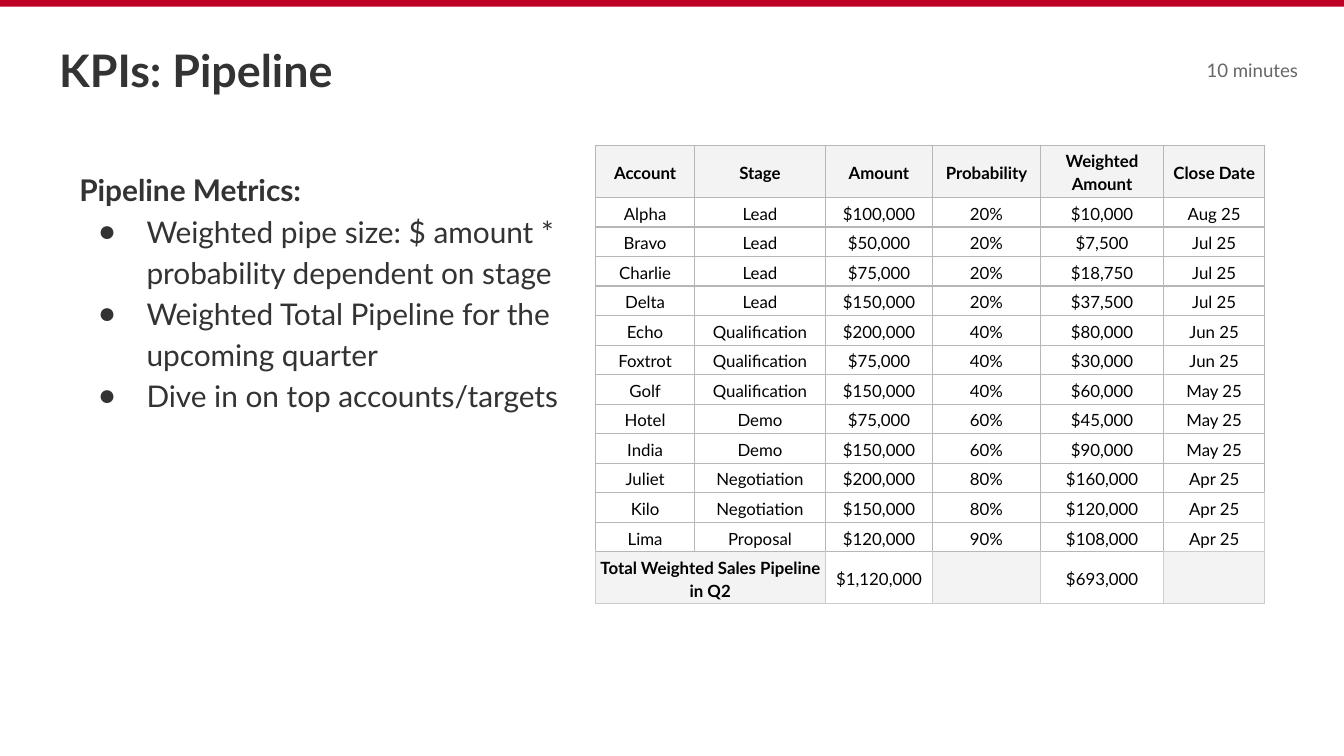
from lxml import etree
from pptx import Presentation
from pptx.dml.color import RGBColor
from pptx.enum import shapes, text
from pptx.oxml.ns import qn
from pptx.util import Inches, Pt

# Content
TITLE = "KPIs: Pipeline"
DURATION = "10 minutes"
METRICS_HEADING = "Pipeline Metrics:"
METRICS = [
    "Weighted pipe size: $ amount * probability dependent on stage",
    "Weighted Total Pipeline for the upcoming quarter",
    "Dive in on top accounts/targets",
]
HEADER = ["Account", "Stage", "Amount", "Probability", "Weighted Amount", "Close Date"]
DEALS = [
    ("Alpha", "Lead", "$100,000", "20%", "$10,000", "Aug 25"),
    ("Bravo", "Lead", "$50,000", "20%", "$7,500", "Jul 25"),
    ("Charlie", "Lead", "$75,000", "20%", "$18,750", "Jul 25"),
    ("Delta", "Lead", "$150,000", "20%", "$37,500", "Jul 25"),
    ("Echo", "Qualification", "$200,000", "40%", "$80,000", "Jun 25"),
    ("Foxtrot", "Qualification", "$75,000", "40%", "$30,000", "Jun 25"),
    ("Golf", "Qualification", "$150,000", "40%", "$60,000", "May 25"),
    ("Hotel", "Demo", "$75,000", "60%", "$45,000", "May 25"),
    ("India", "Demo", "$150,000", "60%", "$90,000", "May 25"),
    ("Juliet", "Negotiation", "$200,000", "80%", "$160,000", "Apr 25"),
    ("Kilo", "Negotiation", "$150,000", "80%", "$120,000", "Apr 25"),
    ("Lima", "Proposal", "$120,000", "90%", "$108,000", "Apr 25"),
]
TOTAL = ["Total Weighted Sales Pipeline in Q2", "", "$1,120,000", "", "$693,000", ""]
COL_WIDTHS = [0.74, 0.97, 0.8, 0.8, 0.92, 0.75]
ROW_HEIGHTS = [0.39] + [0.22] * len(DEALS) + [0.38]

THEME = {
    "font": "Lato",
    "accent": "BE0026", "ink": "333333", "muted": "666666", "cell": "000000",
    "shade": "F3F3F3", "border": "B7B7B7", "border_light": "CCCCCC",
    "title": 24, "body": 16, "note": 10, "table": 9, "spacing": 1.15,
}


def rgb(name):
    return RGBColor.from_string(THEME[name])


def style(p, size, color, bold=False, align=text.PP_ALIGN.LEFT):
    p.alignment = align
    p.font.name = THEME["font"]
    p.font.size = Pt(THEME[size])
    p.font.color.rgb = rgb(color)
    p.font.bold = bold


def place(sp, left, top, width, height, anchor=text.MSO_ANCHOR.TOP):
    sp.left, sp.top, sp.width, sp.height = map(Inches, (left, top, width, height))
    tf = sp.text_frame
    tf.word_wrap = True
    tf.auto_size = text.MSO_AUTO_SIZE.NONE
    tf.vertical_anchor = anchor
    tf.margin_left = tf.margin_right = tf.margin_top = tf.margin_bottom = Inches(0.1)
    return tf


def set_bullet(p, char):
    pPr = p._p.get_or_add_pPr()
    pPr.set("marL", str(Inches(0.5) if char else 0))
    pPr.set("indent", str(Inches(-0.36) if char else 0))
    bullet = etree.Element(qn("a:buChar" if char else "a:buNone"))
    if char:
        bullet.set("char", char)
    # Bullets precede the default run properties in the schema
    pPr.find(qn("a:defRPr")).addprevious(bullet)


def set_borders(cell, light):
    tcPr = cell._tc.get_or_add_tcPr()
    for side in "LRTB":
        ln = etree.SubElement(tcPr, qn("a:ln" + side), w=str(Pt(0.75)))
        fill = etree.SubElement(ln, qn("a:solidFill"))
        color = THEME["border_light" if side in light else "border"]
        etree.SubElement(fill, qn("a:srgbClr"), val=color)


# 16:9 slide
prs = Presentation()
prs.slide_width = Inches(10)
prs.slide_height = prs.slide_width * 9 // 16
s = prs.slides.add_slide(prs.slide_layouts[1])

# Accent bar along the top edge
bar = s.shapes.add_shape(shapes.MSO_SHAPE.RECTANGLE, 0, 0, prs.slide_width, Inches(0.05))
bar.shadow.inherit = False
bar.fill.solid()
bar.fill.fore_color.rgb = rgb("accent")
bar.line.fill.background()

# Title and duration
tf = place(s.shapes.title, 0.34, 0.22, 9.32, 0.63)
tf.text = TITLE
style(tf.paragraphs[0], "title", "ink", bold=True)

duration = s.shapes.add_textbox(0, 0, 0, 0)
tf = place(duration, 8.88, 0.42, 0.94, 0.2, text.MSO_ANCHOR.MIDDLE)
tf.text = DURATION
style(tf.paragraphs[0], "note", "muted")

# Metrics list
tf = place(s.placeholders[1], 0.49, 1.14, 4.22, 2.07)
tf.text = "\n".join([METRICS_HEADING] + METRICS)
for i, p in enumerate(tf.paragraphs):
    style(p, "body", "ink", bold=i == 0)
    p.line_spacing = THEME["spacing"]
    p.space_before = Pt(0)
    set_bullet(p, "●" if i else None)

# Pipeline table
rows = [HEADER] + DEALS + [TOTAL]
last_row, last_col = len(rows) - 1, len(HEADER) - 1
table = s.shapes.add_table(
    len(rows), len(HEADER), Inches(4.43), Inches(1.08),
    Inches(sum(COL_WIDTHS)), Inches(sum(ROW_HEIGHTS))).table
table.first_row = table.horz_banding = False
for col, width in zip(table.columns, COL_WIDTHS):
    col.width = Inches(width)
for row, height in zip(table.rows, ROW_HEIGHTS):
    row.height = Inches(height)

for r, values in enumerate(rows):
    for c, value in enumerate(values):
        cell = table.cell(r, c)
        is_total = r == last_row
        is_label = r == 0 or (is_total and c == 0)
        cell.text = value
        cell.margin_left = cell.margin_right = Inches(0.03)
        cell.margin_top = cell.margin_bottom = Inches(0.02)
        cell.vertical_anchor = (text.MSO_ANCHOR.BOTTOM if is_total and c == 0
                                else text.MSO_ANCHOR.MIDDLE)
        p = cell.text_frame.paragraphs[0]
        style(p, "table", "cell", is_label, text.PP_ALIGN.CENTER)
        p.line_spacing = THEME["spacing"]

        light = ""
        if is_total:
            light = "LRTB" if c == last_col else "LRB"
        elif c == last_col and r >= last_row - 2:
            light = "RB" if r == last_row - 2 else "RTB"
        set_borders(cell, light)
        if is_label or not value:
            cell.fill.solid()
            cell.fill.fore_color.rgb = rgb("shade")
        else:
            cell.fill.background()
table.cell(last_row, 0).merge(table.cell(last_row, 1))

prs.save("out.pptx")
